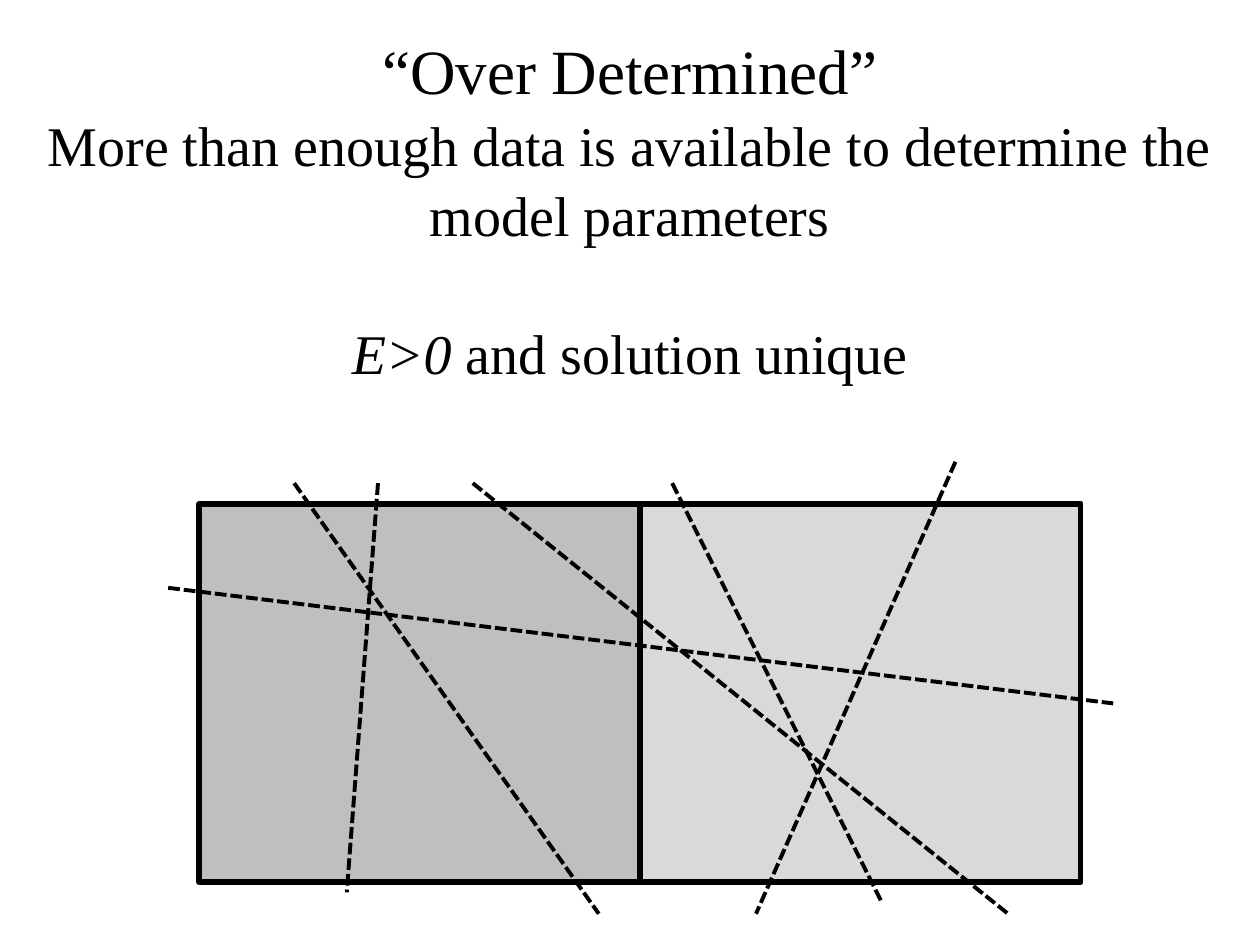
"""Build the slide on over-determined problems: rays crossing two blocks."""
from lxml.etree import SubElement
from pptx import Presentation
from pptx.dml.color import RGBColor
from pptx.enum.dml import MSO_LINE
from pptx.enum.shapes import MSO_CONNECTOR, MSO_SHAPE
from pptx.enum.text import PP_ALIGN
from pptx.oxml.ns import qn
from pptx.util import Cm, Pt

COLORS = {"ink": "000000", "left": "BFBFBF", "right": "D9D9D9"}
FONT = "Times New Roman"

TEXT = [
    (36, 0, [("“Over Determined”", False)]),
    (32, 0, [("More than enough data is available to determine the model parameters", False)]),
    (32, 38.5, [("E>0", True), (" and solution unique", False)]),
]

BLOCKS = [("left", 4.01, 17.78), ("right", 12.9, 8.89)]
BLOCK_TOP, BLOCK_HEIGHT = 10.16, 7.62

RAYS = [
    (5.93, 9.74, 12.07, 18.42),
    (19.26, 9.31, 15.24, 18.42),
    (7.62, 9.74, 6.99, 17.99),
    (13.55, 9.74, 17.78, 18.2),
    (9.53, 9.74, 20.32, 18.42),
    (3.39, 11.85, 22.44, 14.18),
]


def rgb(name):
    return RGBColor.from_string(COLORS[name])


def set_line(line, width):
    line.color.rgb = rgb("ink")
    line.width = Pt(width)


def add_block(slide, color, left, width):
    sp = slide.shapes.add_shape(MSO_SHAPE.RECTANGLE, Cm(left), Cm(BLOCK_TOP),
                                Cm(width), Cm(BLOCK_HEIGHT))
    sp.shadow.inherit = False
    sp.fill.solid()
    sp.fill.fore_color.rgb = rgb(color)
    set_line(sp.line, 3)


def add_ray(slide, ends):
    ray = slide.shapes.add_connector(MSO_CONNECTOR.STRAIGHT, *map(Cm, ends))
    set_line(ray.line, 2.25)
    ray.line.dash_style = MSO_LINE.SQUARE_DOT
    SubElement(ray._element.spPr, qn("a:effectLst"))


def add_text(slide):
    tf = slide.shapes.add_textbox(0, Cm(0.43), Cm(25.4), Cm(8.03)).text_frame
    tf.word_wrap = True
    for i, (size, before, runs) in enumerate(TEXT):
        p = tf.add_paragraph() if i else tf.paragraphs[0]
        p.alignment = PP_ALIGN.CENTER
        p.line_spacing = 1.05
        p.space_before = Pt(before)
        p.font.size = Pt(size)
        p.font.name = FONT
        p.font.color.rgb = rgb("ink")
        for text, italic in runs:
            r = p.add_run()
            r.text = text
            r.font.italic = italic


def main():
    prs = Presentation()
    prs.slide_width, prs.slide_height = Cm(25.4), Cm(19.05)
    s = prs.slides.add_slide(prs.slide_layouts[6])
    for block in BLOCKS:
        add_block(s, *block)
    add_text(s)
    for ends in RAYS:
        add_ray(s, ends)
    prs.save("out.pptx")


if __name__ == "__main__":
    main()
